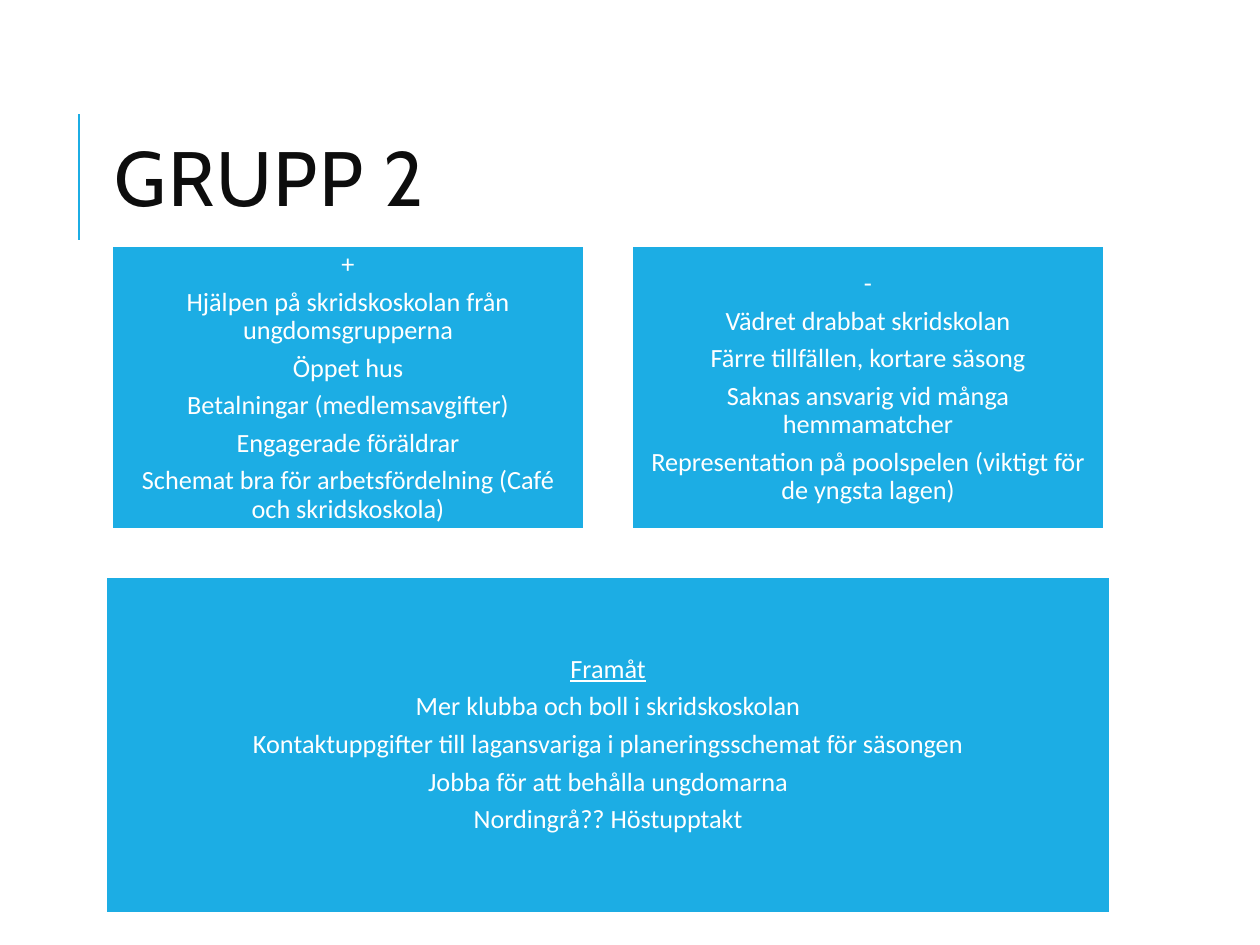
import pptx
import pptx.dml.color
import pptx.enum.shapes
import pptx.enum.text
import pptx.oxml
import pptx.oxml.ns
import pptx.util

PX = 914400 // 90
COLORS = {"accent": "1CADE4", "title": "0D0D0D", "white": "FFFFFF"}
ANCHOR = pptx.enum.text.MSO_ANCHOR
ALIGN = pptx.enum.text.PP_ALIGN

PLUS = [
    "+",
    "Hjälpen på skridskoskolan från ungdomsgrupperna",
    "Öppet hus",
    "Betalningar (medlemsavgifter)",
    "Engagerade föräldrar",
    "Schemat bra för arbetsfördelning (Café och skridskoskola)",
]
MINUS = [
    "-",
    "Vädret drabbat skridskolan",
    "Färre tillfällen, kortare säsong",
    "Saknas ansvarig vid många hemmamatcher",
    "Representation på poolspelen (viktigt för de yngsta lagen)",
]
FORWARD = [
    "Framåt",
    "Mer klubba och boll i skridskoskolan",
    "Kontaktuppgifter till lagansvariga i planeringsschemat för säsongen",
    "Jobba för att behålla ungdomarna",
    "Nordingrå?? Höstupptakt",
]


def rgb(name):
    return pptx.dml.color.RGBColor.from_string(COLORS[name])


def emu(*lengths):
    return [n * PX for n in lengths]


def add_run(p, text, font, size, color):
    r = p.add_run()
    r.text = text
    r.font.name = font
    r.font.size = pptx.util.Pt(size)
    r.font.color.rgb = rgb(color)
    return r


def add_title(s, x, y, w, h, text):
    """Title with an accent rule to its left."""
    rule = s.shapes.add_connector(
        pptx.enum.shapes.MSO_CONNECTOR.STRAIGHT,
        *emu(x - 27, y + 159, x - 27, y + 33))
    rule.line.color.rgb = rgb("accent")
    rule.line.width = pptx.util.Pt(1.5)
    pptx.oxml.ns.qn("a:effectLst")
    rule._element.spPr.append(pptx.oxml.parse_xml(
        "<a:effectLst %s/>" % pptx.oxml.ns.nsdecls("a")))

    tf = s.shapes.add_textbox(*emu(x, y, w, h)).text_frame
    tf.word_wrap = True
    tf.vertical_anchor = ANCHOR.MIDDLE
    p = tf.paragraphs[0]
    p.line_spacing = 0.8
    r = add_run(p, text, "Cabin", 61.6, "title")
    r.font._element.set("spc", "140")


def add_card(s, x, y, w, h, lines, underline_heading=False):
    sp = s.shapes.add_shape(
        pptx.enum.shapes.MSO_SHAPE.RECTANGLE, *emu(x, y, w, h))
    sp.shadow.inherit = False
    sp.fill.solid()
    sp.fill.fore_color.rgb = rgb("accent")
    sp.line.color.rgb = rgb("white")
    sp.line.width = pptx.util.Pt(1.25)

    tf = sp.text_frame
    tf.word_wrap = True
    tf.vertical_anchor = ANCHOR.MIDDLE
    tf.margin_left = tf.margin_right = 8 * PX
    tf.margin_top = tf.margin_bottom = 8 * PX
    for i, line in enumerate(lines):
        p = tf.add_paragraph() if i else tf.paragraphs[0]
        p.alignment = ALIGN.CENTER
        p.line_spacing = 0.9
        p.space_after = pptx.util.Pt(7.35)
        r = add_run(p, line, "Calibri", 21, "white")
        if underline_heading and i == 0:
            r.font.underline = True


def add_card_row(s, x, y, w, h, gap, cards):
    card_w = (w - gap * (len(cards) - 1)) // len(cards)
    for i, lines in enumerate(cards):
        add_card(s, x + i * (card_w + gap), y, card_w, h, lines)


def main():
    prs = pptx.Presentation()
    prs.slide_width, prs.slide_height = emu(1260, 945)
    s = prs.slides.add_slide(prs.slide_layouts[6])
    add_title(s, 106, 81, 1004, 207, "GRUPP 2")
    add_card_row(s, 112, 246, 992, 283, 48, [PLUS, MINUS])
    add_card(s, 106, 577, 1004, 336, FORWARD, underline_heading=True)
    prs.save("out.pptx")


if __name__ == "__main__":
    main()
